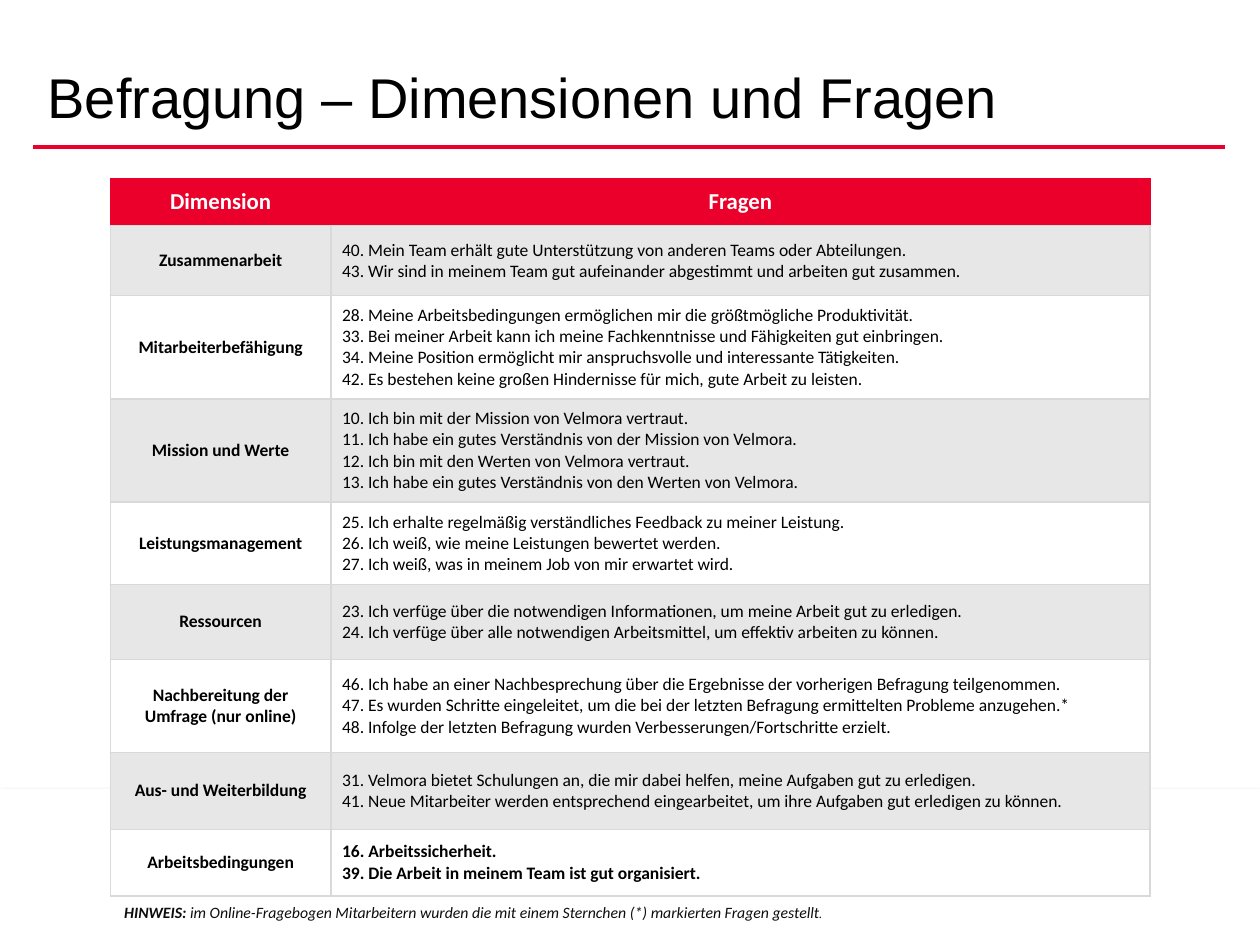
import pptx
import pptx.util
import pptx.dml.color
import pptx.enum.shapes
import pptx.enum.text
import pptx.oxml
import pptx.oxml.ns
from dataclasses import dataclass
from lxml import etree

Pt = pptx.util.Pt
Align = pptx.enum.text.PP_ALIGN
Anchor = pptx.enum.text.MSO_ANCHOR
qn = pptx.oxml.ns.qn


@dataclass(frozen=True)
class Theme:
    red: str = "EA002A"
    white: str = "FFFFFF"
    black: str = "000000"
    ink: str = "0D0D0D"
    band: str = "E7E7E7"
    rule: str = "D9D9D9"
    head: str = "Arial"
    body: str = "Calibri"
    title: float = 32
    label: float = 13
    text: float = 10
    note: float = 9
    small: float = 7


T = Theme()

ROWS = [
    (40, "Zusammenarbeit", [
        "40. Mein Team erhält gute Unterstützung von anderen Teams oder Abteilungen.",
        "43. Wir sind in meinem Team gut aufeinander abgestimmt und arbeiten gut zusammen."]),
    (59, "Mitarbeiterbefähigung", [
        "28. Meine Arbeitsbedingungen ermöglichen mir die größtmögliche Produktivität.",
        "33. Bei meiner Arbeit kann ich meine Fachkenntnisse und Fähigkeiten gut einbringen.",
        "34. Meine Position ermöglicht mir anspruchsvolle und interessante Tätigkeiten.",
        "42. Es bestehen keine großen Hindernisse für mich, gute Arbeit zu leisten."]),
    (59, "Mission und Werte", [
        "10. Ich bin mit der Mission von Velmora vertraut.",
        "11. Ich habe ein gutes Verständnis von der Mission von Velmora.",
        "12. Ich bin mit den Werten von Velmora vertraut.",
        "13. Ich habe ein gutes Verständnis von den Werten von Velmora."]),
    (47, "Leistungsmanagement", [
        "25. Ich erhalte regelmäßig verständliches Feedback zu meiner Leistung.",
        "26. Ich weiß, wie meine Leistungen bewertet werden.",
        "27. Ich weiß, was in meinem Job von mir erwartet wird."]),
    (43, "Ressourcen", [
        "23. Ich verfüge über die notwendigen Informationen, um meine Arbeit gut zu erledigen.",
        "24. Ich verfüge über alle notwendigen Arbeitsmittel, um effektiv arbeiten zu können."]),
    (53, "Nachbereitung der Umfrage (nur online)", [
        "46. Ich habe an einer Nachbesprechung über die Ergebnisse der vorherigen Befragung teilgenommen.",
        "47. Es wurden Schritte eingeleitet, um die bei der letzten Befragung ermittelten Probleme anzugehen.*",
        "48. Infolge der letzten Befragung wurden Verbesserungen/Fortschritte erzielt."]),
    (44, "Aus- und Weiterbildung", [
        "31. Velmora bietet Schulungen an, die mir dabei helfen, meine Aufgaben gut zu erledigen.",
        "41. Neue Mitarbeiter werden entsprechend eingearbeitet, um ihre Aufgaben gut erledigen zu können."]),
    (38, "Arbeitsbedingungen", [
        "16. Arbeitssicherheit.",
        "39. Die Arbeit in meinem Team ist gut organisiert."]),
]


def rgb(tone):
    return pptx.dml.color.RGBColor.from_string(tone)


def put(para, text, size=T.text, font=T.body, tone=T.black, bold=False, slant=False):
    run = para.add_run()
    run.text = text
    run.font.size = Pt(size)
    run.font.name = font
    run.font.color.rgb = rgb(tone)
    run.font.bold = bold
    run.font.italic = slant


def edge(cell, sides, tone):
    props = cell._tc.get_or_add_tcPr()
    for side in sides:
        line = etree.SubElement(props, qn("a:ln" + side), w=str(Pt(1)))
        fill = etree.SubElement(line, qn("a:solidFill"))
        etree.SubElement(fill, qn("a:srgbClr"), val=tone)


def fill_cell(cell, lines, fill, align, **style):
    cell.margin_left = cell.margin_right = Pt(6.5)
    cell.margin_top = cell.margin_bottom = Pt(3)
    cell.vertical_anchor = Anchor.MIDDLE
    cell.fill.solid()
    cell.fill.fore_color.rgb = rgb(fill)
    frame = cell.text_frame
    for i, text in enumerate(lines):
        para = frame.add_paragraph() if i else frame.paragraphs[0]
        para.alignment = align
        put(para, text, **style)


def add_base(slide, x, y, wide, high):
    base = slide.shapes.add_shape(
        pptx.enum.shapes.MSO_SHAPE.RECTANGLE, Pt(x), Pt(y), Pt(wide), Pt(high))
    base.fill.solid()
    base.fill.fore_color.rgb = rgb(T.white)
    base.line.color.rgb = rgb(T.white)
    base.line.width = Pt(0.75)
    base.shadow.inherit = False
    glow = base._element.spPr.find(qn("a:effectLst"))
    cast = etree.SubElement(glow, qn("a:outerShdw"), blurRad=str(Pt(3.1)),
                            dist=str(Pt(1.8)), dir="5400000", rotWithShape="0")
    tint = etree.SubElement(cast, qn("a:srgbClr"), val=T.black)
    etree.SubElement(tint, qn("a:alpha"), val="35000")


def add_title(slide, x, y, wide, high):
    title = slide.shapes.title
    title.left, title.top, title.width, title.height = Pt(x), Pt(y), Pt(wide), Pt(high)
    frame = title.text_frame
    frame.auto_size = pptx.enum.text.MSO_AUTO_SIZE.NONE
    frame.vertical_anchor = Anchor.BOTTOM
    para = frame.paragraphs[0]
    para.alignment = Align.LEFT
    para.line_spacing = 0.8
    put(para, "Befragung – Dimensionen und Fragen", size=T.title, font=T.head)
    base = y + high + 6.5
    rule = slide.shapes.add_connector(
        pptx.enum.shapes.MSO_CONNECTOR.STRAIGHT, Pt(x - 1), Pt(base), Pt(x + 680), Pt(base))
    rule.line.color.rgb = rgb(T.red)
    rule.line.width = Pt(2)
    etree.SubElement(rule._element.spPr, qn("a:effectLst"))


def add_grid(slide, x, y, wide, high):
    tall = [27] + [row[0] for row in ROWS]
    table = slide.shapes.add_table(len(tall), 2, Pt(x), Pt(y), Pt(wide), Pt(high)).table
    table.horz_banding = False
    table.columns[0].width = Pt(126)
    table.columns[1].width = Pt(wide - 126)
    for row, size in zip(table.rows, tall):
        row.height = Pt(size)
    for i, text in enumerate(["Dimension", "Fragen"]):
        cell = table.cell(0, i)
        edge(cell, "LRT", T.red)
        edge(cell, "B", T.rule)
        fill_cell(cell, [text], T.red, Align.CENTER, size=T.label, tone=T.white, bold=True)
    for i, (size, name, lines) in enumerate(ROWS, 1):
        fill = T.band if i % 2 else T.white
        left, right = table.cell(i, 0), table.cell(i, 1)
        for cell in (left, right):
            edge(cell, "LRTB", T.rule)
        fill_cell(left, [name], fill, Align.CENTER, bold=True)
        fill_cell(right, lines, fill, Align.LEFT, bold=i == len(ROWS))


def add_note(slide, x, y, wide, high):
    frame = slide.shapes.add_textbox(Pt(x), Pt(y), Pt(wide), Pt(high)).text_frame
    frame.word_wrap = True
    frame.margin_left = frame.margin_right = Pt(8)
    frame.margin_top = frame.margin_bottom = Pt(4)
    para = frame.paragraphs[0]
    put(para, "HINWEIS: ", size=T.note, tone=T.ink, bold=True, slant=True)
    put(para, "im Online-Fragebogen Mitarbeitern wurden die mit einem Sternchen (*) "
        "markierten Fragen gestellt", size=T.note, tone=T.ink, slant=True)
    put(para, ".", size=T.small, tone=T.ink)


def main():
    deck = pptx.Presentation()
    deck.slide_width, deck.slide_height = Pt(720), Pt(540)
    slide = deck.slides.add_slide(deck.slide_layouts[5])
    add_base(slide, 0, 451, 720, 89)
    add_title(slide, 20, 3.5, 648, 74)
    add_note(slide, 63, 512, 526, 23)
    add_grid(slide, 63, 102, 594, 410)
    deck.save("out.pptx")


if __name__ == "__main__":
    main()
